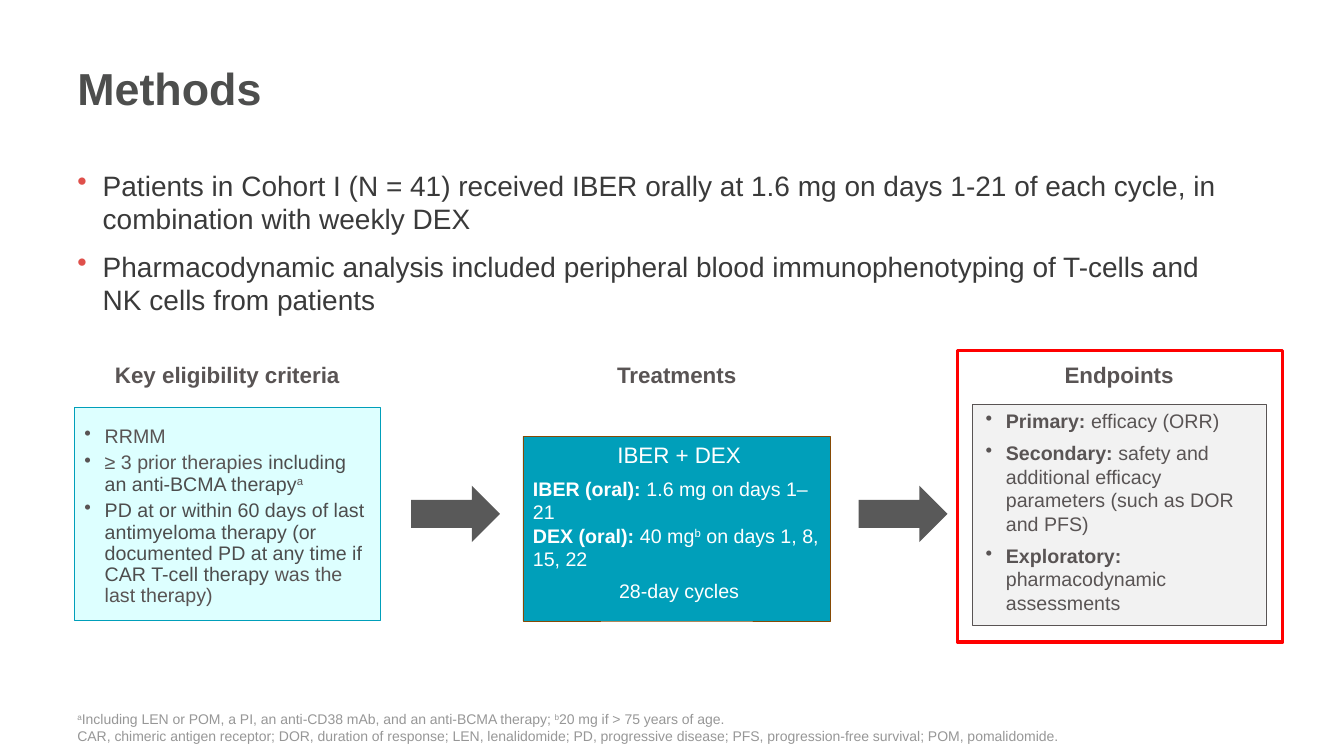
from collections import namedtuple

from lxml.etree import SubElement
from pptx import Presentation
from pptx.dml.color import RGBColor
from pptx.enum.shapes import MSO_SHAPE as Shape
from pptx.enum.text import MSO_ANCHOR as Anchor, PP_ALIGN as Align
from pptx.oxml.ns import qn
from pptx.util import Cm, Pt

TITLE_GREY = RGBColor(0x4D, 0x4E, 0x4D)
BODY_GREY = RGBColor(0x3A, 0x3A, 0x3A)
CARD_GREY = RGBColor(0x59, 0x54, 0x54)
THERAPY_GREY = RGBColor(0x4D, 0x4D, 0x4D)
ARROW_GREY = RGBColor(0x59, 0x59, 0x59)
NOTE_GREY = RGBColor(0x97, 0x97, 0x97)
PALE_GREY = RGBColor(0xF2, 0xF2, 0xF2)
PALE_CYAN = RGBColor(0xDD, 0xFF, 0xFF)
TEAL = RGBColor(0x00, 0x9F, 0xBA)
BROWN = RGBColor(0x86, 0x4A, 0x05)
CORAL = RGBColor(0xDF, 0x50, 0x4B)
RED = RGBColor(0xFF, 0x00, 0x00)
WHITE = RGBColor(0xFF, 0xFF, 0xFF)

Box = namedtuple("Box", "left top width height")
Row = namedtuple("Row", "spans format")


def lengths(box):
    return [Cm(value) for value in box]


def add_bullet(para, color, indent):
    properties = para._p.get_or_add_pPr()
    properties.set("marL", str(Cm(indent)))
    properties.set("indent", str(-Cm(indent)))
    fill = SubElement(properties, qn("a:buClr"))
    SubElement(fill, qn("a:srgbClr")).set("val", str(color))
    SubElement(properties, qn("a:buChar")).set("char", "•")


def add_span(para, text, size, color, style=""):
    span = para.add_run()
    span.text = text
    values = {"name": "Arial", "size": Pt(size), "bold": style == "bold"}
    for name, value in values.items():
        setattr(span.font, name, value)
    span.font.color.rgb = THERAPY_GREY if style == "therapy" else color
    if style == "super":
        span._r.get_or_add_rPr().set("baseline", "30000")


def write(shape, rows, size, color, anchor=Anchor.TOP, bullet=None, indent=0.51, margins=None):
    frame = shape.text_frame
    frame.word_wrap = True
    frame.vertical_anchor = anchor
    for name, value in (margins or {}).items():
        setattr(frame, name, Cm(value))
    for index, row in enumerate(rows):
        para = frame.paragraphs[0] if index == 0 else frame.add_paragraph()
        para.alignment = Align.LEFT
        values = dict(row.format)
        row_size = values.pop("size", size)
        for name, value in values.items():
            setattr(para, name, value)
        if bullet is not None:
            add_bullet(para, bullet, indent)
        for text, style in row.spans:
            if style == "break":
                para.add_line_break()
            else:
                add_span(para, text, row_size, color, style)


def add_text(page, box, rows, size, color, **options):
    write(page.shapes.add_textbox(*lengths(box)), rows, size, color, **options)


def add_block(page, kind, box, fill=None, line=None, weight=0.25):
    block = page.shapes.add_shape(kind, *lengths(box))
    block.shadow.inherit = False
    if fill is None:
        block.fill.background()
    else:
        block.fill.solid()
        block.fill.fore_color.rgb = fill
    if line is None:
        block.line.fill.background()
    else:
        block.line.color.rgb = line
        block.line.width = Pt(weight)
    return block


def add_column(page, box, heading, fill, line, rows, color, **options):
    card = add_block(page, Shape.RECTANGLE, box, fill, line)
    write(card, rows, 14, color, **options)
    title = Row([(heading, "bold")], {"alignment": Align.CENTER})
    add_text(page, Box(box.left, 8.97, box.width, 0.94), [title], 16, CARD_GREY)


def add_eligibility(page, box):
    after = {"space_after": Pt(4)}
    close = {"line_spacing": 0.9, **after}
    rows = [
        Row([("RRMM", "")], {"line_spacing": 1.5, **after}),
        Row([("≥ 3 prior therapies", ""), (" including an anti-BCMA therapy", "therapy"),
             ("a", "super")], close),
        Row([("PD at or within 60 days of last antimyeloma therapy (or documented PD "
              "at any time if CAR T-cell therapy ", "therapy"),
             ("was the last therapy)", "")], close),
    ]
    add_column(page, box, "Key eligibility criteria", PALE_CYAN, TEAL, rows, CARD_GREY,
               bullet=CARD_GREY)


def add_treatments(page, box):
    centre = {"alignment": Align.CENTER}
    after = {"space_after": Pt(6)}
    rows = [
        Row([("IBER + DEX", "")], {"size": 16, **centre, **after}),
        Row([("IBER (oral): ", "bold"), ("1.6 mg on days 1–21", "")], {}),
        Row([("DEX (oral): ", "bold"), ("40 mg", ""), ("b", "super"),
             (" on days 1, 8, 15, 22", "")], after),
        Row([("28-day cycles", "")], centre),
    ]
    add_column(page, box, "Treatments", TEAL, BROWN, rows, WHITE,
               margins={"margin_right": 0.13})


def add_endpoints(page, box):
    endpoints = {
        "Primary: ": "efficacy (ORR)",
        "Secondary: ": "safety and additional efficacy parameters (such as DOR and PFS)",
        "Exploratory: ": "pharmacodynamic assessments",
    }
    rows = [Row([(label, "bold"), (text, "")], {"space_after": Pt(6)})
            for label, text in endpoints.items()]
    add_column(page, box, "Endpoints", PALE_GREY, CARD_GREY, rows, CARD_GREY,
               bullet=CARD_GREY, margins={"margin_left": 0.33})
    frame = Box(box.left - 0.38, box.top - 1.35, box.width + 0.81, box.height + 1.78)
    add_block(page, Shape.RECTANGLE, frame, line=RED, weight=2.25)


def add_summary(page, box):
    rows = [
        Row([("Patients in Cohort I (N = 41) received IBER orally at 1.6 mg on days 1-21 "
              "of each cycle, in combination with weekly DEX", "")], {}),
        Row([("Pharmacodynamic analysis included peripheral blood immunophenotyping "
              "of T-cells and NK cells from patients", "")], {"space_before": Pt(10)}),
    ]
    add_text(page, box, rows, 20, BODY_GREY, bullet=CORAL, indent=0.64)


def add_footnotes(page, box):
    notes = Row([
        ("a", "super"),
        ("Including LEN or POM, a PI, an anti-CD38 mAb, and an anti-BCMA therapy; ", ""),
        ("b", "super"),
        ("20 mg if > 75 years of age. ", ""),
        ("", "break"),
        ("CAR, chimeric antigen receptor; DOR, duration of response; LEN, lenalidomide; "
         "PD, progressive disease; PFS, progression-free survival; POM, pomalidomide.", ""),
    ], {})
    add_text(page, box, [notes], 10, NOTE_GREY, anchor=Anchor.BOTTOM)


def add_methods_page(deck):
    page = deck.slides.add_slide(deck.slide_layouts[6])
    left, width = 1.7, 29.85
    add_text(page, Box(left, 0.56, width, 3.3), [Row([("Methods", "bold")], {})],
             32, TITLE_GREY, anchor=Anchor.MIDDLE)
    add_summary(page, Box(left, 4.11, width, 4.5))
    add_eligibility(page, Box(1.88, 10.26, 7.7, 5.38))
    add_treatments(page, Box(13.18, 11, 7.75, 4.65))
    add_endpoints(page, Box(24.51, 10.19, 7.39, 5.56))
    for arrow_left in (10.36, 21.64):
        add_block(page, Shape.RIGHT_ARROW, Box(arrow_left, 12.24, 2.24, 1.42), ARROW_GREY)
    add_footnotes(page, Box(left, 17.65, width, 1.22))


def main():
    deck = Presentation()
    deck.slide_width = Cm(33.87)
    deck.slide_height = Cm(19.05)
    add_methods_page(deck)
    deck.save("out.pptx")


if __name__ == "__main__":
    main()
